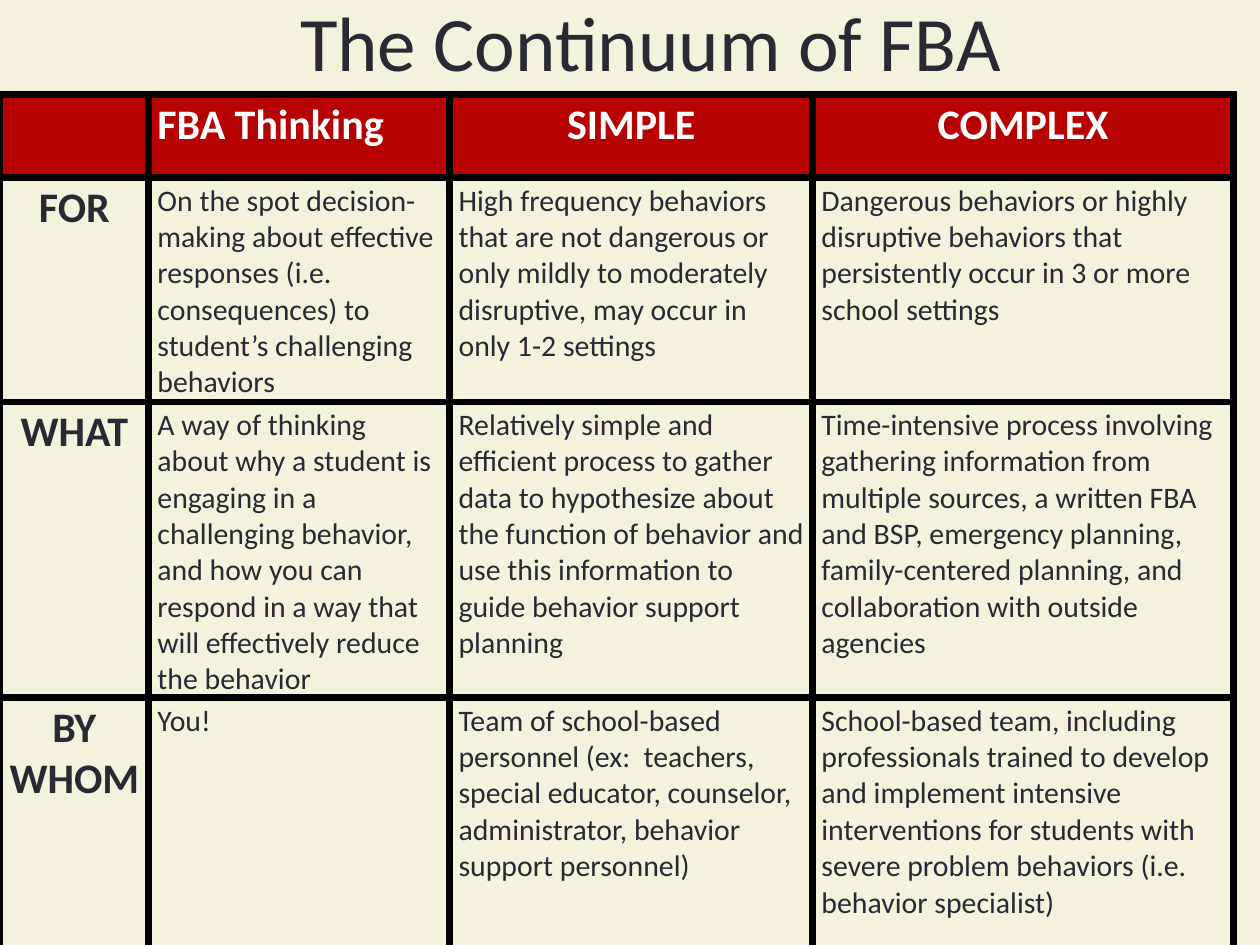
from lxml.etree import SubElement
from pptx import Presentation
from pptx.dml.color import RGBColor
from pptx.enum.text import MSO_ANCHOR, PP_ALIGN
from pptx.oxml.ns import qn
from pptx.util import Inches, Pt

FONT = "Calibri"
CREAM, INK, RED, WHITE, BLACK = "F3F2DC", "292934", "B60202", "FFFFFF", "000000"
BORDER_WIDTH = Pt(4.5)

COLUMN_WIDTHS = [1.18, 2.39, 2.88, 3.34]
ROW_HEIGHTS = [0.66, 1.77, 2.34, 1.99]
CONTINUUM = [
    ["", "FBA Thinking", "SIMPLE", "COMPLEX"],
    ["FOR",
     "On the spot decision-making about effective responses (i.e. consequences) "
     "to student’s challenging behaviors",
     "High frequency behaviors that are not dangerous or only mildly to moderately "
     "disruptive, may occur in only 1-2 settings",
     "Dangerous behaviors or highly disruptive behaviors that persistently occur "
     "in 3 or more school settings"],
    ["WHAT",
     "A way of thinking about why a student is engaging in a challenging behavior, "
     "and how you can respond in a way that will effectively reduce the behavior",
     "Relatively simple and efficient process to gather data to hypothesize about "
     "the function of behavior and use this information to guide behavior support planning",
     "Time-intensive process involving gathering information from multiple sources, "
     "a written FBA and BSP, emergency planning, family-centered planning, and "
     "collaboration with outside agencies"],
    ["BY WHOM",
     "You!",
     "Team of school-based personnel (ex:  teachers, special educator, counselor, "
     "administrator, behavior support personnel)",
     "School-based team, including professionals trained to develop and implement "
     "intensive interventions for students with severe problem behaviors "
     "(i.e. behavior specialist)"],
]


def color(hex_value):
    return RGBColor.from_string(hex_value)


def write(frame, text, size, ink, bold=False, align=PP_ALIGN.LEFT):
    paragraph = frame.paragraphs[0]
    paragraph.alignment = align
    run = paragraph.add_run()
    run.text = text
    run.font.name = FONT
    run.font.size = Pt(size)
    run.font.bold = bold
    run.font.color.rgb = color(ink)


def add_title(slide, text):
    title = slide.shapes.add_textbox(Inches(1.79), 0, Inches(6.75), Inches(0.64))
    frame = title.text_frame
    frame.word_wrap = True
    frame.vertical_anchor = MSO_ANCHOR.MIDDLE
    write(frame, text, 44, INK, align=PP_ALIGN.CENTER)


def set_borders(cell):
    properties = cell._tc.get_or_add_tcPr()
    for side in ("a:lnL", "a:lnR", "a:lnT", "a:lnB"):
        line = SubElement(properties, qn(side), w=str(BORDER_WIDTH))
        fill = SubElement(line, qn("a:solidFill"))
        SubElement(fill, qn("a:srgbClr"), val=BLACK)


def style_cell(cell, is_header):
    cell.margin_left = cell.margin_right = Inches(0.07)
    cell.margin_top = cell.margin_bottom = Inches(0.04)
    set_borders(cell)
    if is_header:
        cell.fill.solid()
        cell.fill.fore_color.rgb = color(RED)
    else:
        cell.fill.background()


def add_continuum_table(slide):
    table = slide.shapes.add_table(
        len(ROW_HEIGHTS), len(COLUMN_WIDTHS), 0, Inches(0.75),
        Inches(sum(COLUMN_WIDTHS)), Inches(sum(ROW_HEIGHTS))).table
    for column, width in zip(table.columns, COLUMN_WIDTHS):
        column.width = Inches(width)
    for row, height in zip(table.rows, ROW_HEIGHTS):
        row.height = Inches(height)

    for r, row_texts in enumerate(CONTINUUM):
        for c, text in enumerate(row_texts):
            cell = table.cell(r, c)
            is_header = r == 0
            is_heading = is_header or c == 0
            style_cell(cell, is_header)
            if text:
                # The "FBA Thinking" column is left-aligned throughout
                centered = is_heading and c != 1
                write(cell.text_frame, text, 24 if is_heading else 17,
                      WHITE if is_header else INK, is_heading,
                      PP_ALIGN.CENTER if centered else PP_ALIGN.LEFT)


def main():
    deck = Presentation()
    deck.slide_width, deck.slide_height = Inches(10), Inches(7.5)
    slide = deck.slides.add_slide(deck.slide_layouts[6])

    # Background
    slide.background.fill.solid()
    slide.background.fill.fore_color.rgb = color(CREAM)

    # Title and comparison table
    add_title(slide, "The Continuum of FBA")
    add_continuum_table(slide)

    deck.save("out.pptx")


if __name__ == "__main__":
    main()
